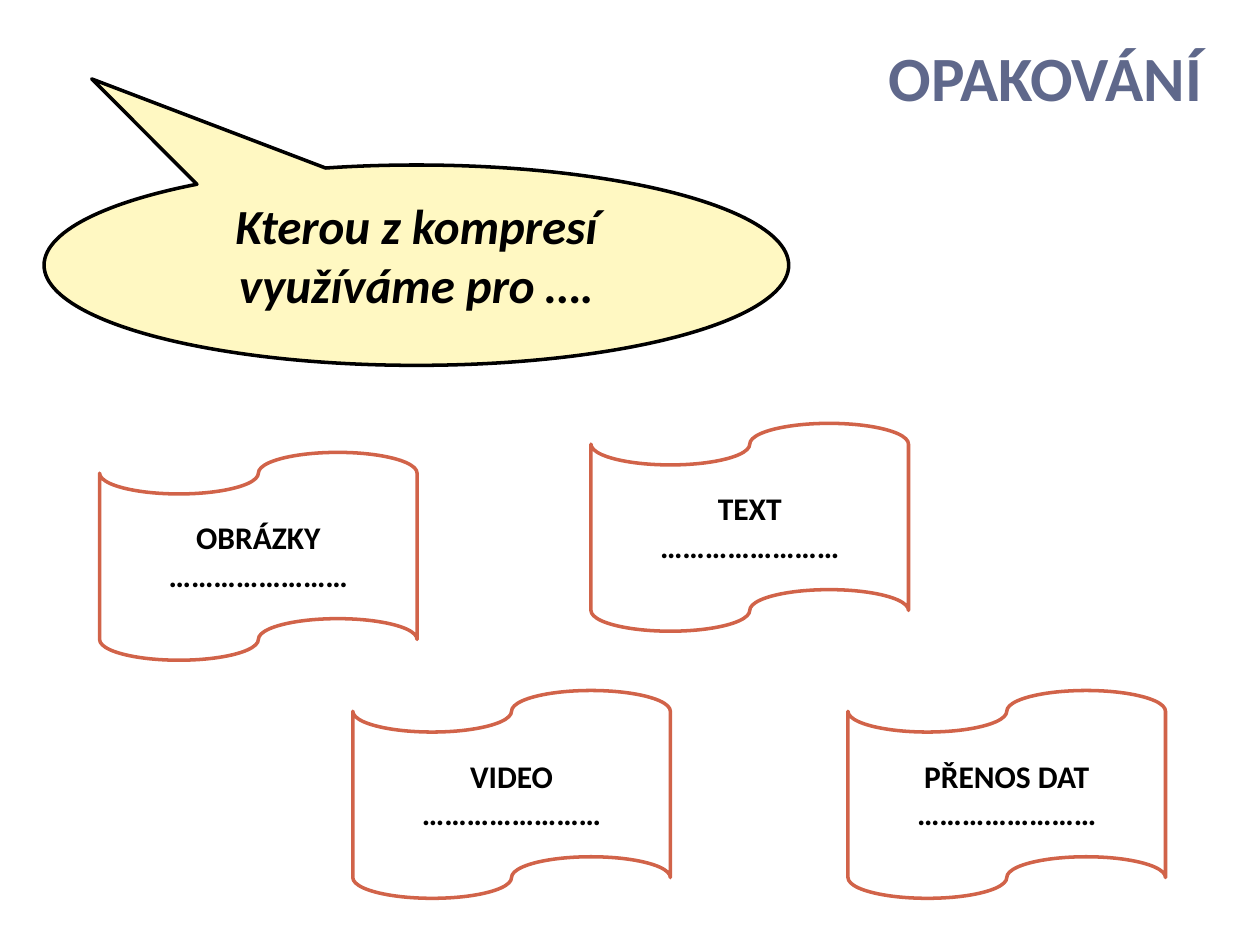
from pptx import Presentation
from pptx.dml.color import RGBColor
from pptx.enum.shapes import MSO_SHAPE
from pptx.enum.text import MSO_ANCHOR, PP_ALIGN
from pptx.util import Inches, Pt

FONT = "Calibri"
BLACK = RGBColor(0x00, 0x00, 0x00)
WHITE = RGBColor(0xFF, 0xFF, 0xFF)
SLATE = RGBColor(0x5F, 0x68, 0x8B)
CREAM = RGBColor(0xFF, 0xF8, 0xC2)
RUST = RGBColor(0xD1, 0x63, 0x49)

SLIDE_WIDTH, SLIDE_HEIGHT = 10, 7.5
TAPE_WIDTH, TAPE_HEIGHT = 2.52, 1.65
LOWER_ROW = 5.48
BLANK_LINE = "……………………"
TAPES = [
    ("OBRÁZKY", 0.79, 3.59),
    ("VIDEO", 2.8, LOWER_ROW),
    ("PŘENOS DAT", 6.73, LOWER_ROW),
    ("TEXT", 4.69, 3.36),
]


def write_lines(shape, lines, size, color, alignment, anchor, italic=False):
    frame = shape.text_frame
    frame.word_wrap = True
    frame.vertical_anchor = anchor
    frame.text = "\n".join(lines)
    for paragraph in frame.paragraphs:
        paragraph.alignment = alignment
        font = paragraph.font
        font.name, font.size, font.bold, font.italic = FONT, Pt(size), True, italic
        font.color.rgb = color


def add_outlined_shape(slide, kind, box, fill, line):
    shape = slide.shapes.add_shape(kind, *map(Inches, box))
    shape.shadow.inherit = False
    shape.fill.solid()
    shape.fill.fore_color.rgb = fill
    shape.line.color.rgb = line
    shape.line.width = Pt(2)
    return shape


def place_title(slide, box, text):
    title = slide.shapes.title
    title.left, title.top, title.width, title.height = map(Inches, box)
    write_lines(title, [text], 36, SLATE, PP_ALIGN.RIGHT, MSO_ANCHOR.BOTTOM)
    title.text_frame.paragraphs[0].line_spacing = Pt(20)


def add_question(slide, box, text):
    callout = add_outlined_shape(slide, MSO_SHAPE.OVAL_CALLOUT, box, CREAM, BLACK)
    callout.adjustments[0] = -0.436
    callout.adjustments[1] = -0.93
    write_lines(callout, [text], 28, BLACK, PP_ALIGN.CENTER, MSO_ANCHOR.MIDDLE, italic=True)
    callout.text_frame.margin_bottom = Inches(0.22)


def add_tape(slide, box, topic):
    tape = add_outlined_shape(slide, MSO_SHAPE.FLOWCHART_PUNCHED_TAPE, box, WHITE, RUST)
    write_lines(tape, [topic, BLANK_LINE], 18, BLACK, PP_ALIGN.CENTER, MSO_ANCHOR.MIDDLE)


def main():
    presentation = Presentation()
    presentation.slide_width = Inches(SLIDE_WIDTH)
    presentation.slide_height = Inches(SLIDE_HEIGHT)
    slide = presentation.slides.add_slide(presentation.slide_layouts[5])
    place_title(slide, (3.5, 0.28, 6.14, 0.68), "OPAKOVÁNÍ")
    add_question(slide, (0.35, 1.31, 5.91, 1.59), "Kterou z kompresí využíváme pro ….")
    for topic, left, top in TAPES:
        add_tape(slide, (left, top, TAPE_WIDTH, TAPE_HEIGHT), topic)
    presentation.save("out.pptx")


if __name__ == "__main__":
    main()
